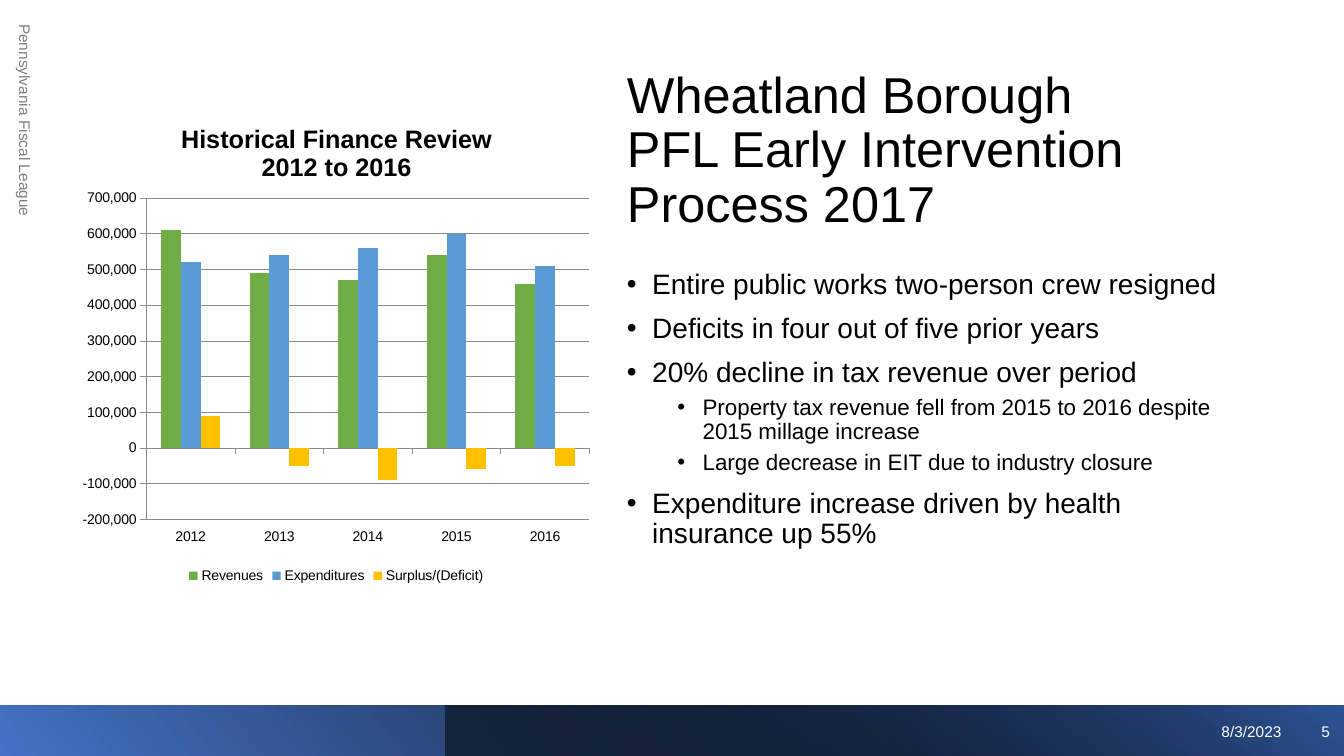
from lxml import etree
from pptx import Presentation
from pptx.chart.data import CategoryChartData
from pptx.dml.color import RGBColor
from pptx.enum.chart import XL_CHART_TYPE, XL_LEGEND_POSITION, XL_TICK_LABEL_POSITION, XL_TICK_MARK
from pptx.enum.shapes import MSO_SHAPE
from pptx.enum.text import MSO_ANCHOR, PP_ALIGN
from pptx.oxml import parse_xml
from pptx.oxml.ns import nsdecls, qn
from pptx.util import Inches, Pt

COLUMNS = XL_CHART_TYPE.COLUMN_CLUSTERED
LEGEND_BOTTOM = XL_LEGEND_POSITION.BOTTOM
LABELS_LOW = XL_TICK_LABEL_POSITION.LOW
TICK_OUT, TICK_NONE = XL_TICK_MARK.OUTSIDE, XL_TICK_MARK.NONE
RECTANGLE = MSO_SHAPE.RECTANGLE
TOP, MIDDLE, BOTTOM = MSO_ANCHOR.TOP, MSO_ANCHOR.MIDDLE, MSO_ANCHOR.BOTTOM
LEFT, RIGHT = PP_ALIGN.LEFT, PP_ALIGN.RIGHT

FONT = "Arial"
COLORS = {
    "text": "000000", "muted": "808080", "white": "FFFFFF", "grid": "8C8C8C",
    "band": "4472C4", "band_end": "2F5597",
    "revenues": "70AD47", "expenditures": "5B9BD5", "surplus": "FFC000",
}
YEARS = ["2012", "2013", "2014", "2015", "2016"]
SERIES = [
    ("Revenues", "revenues", [610000, 490000, 470000, 540000, 460000]),
    ("Expenditures", "expenditures", [520000, 540000, 560000, 600000, 510000]),
    ("Surplus/(Deficit)", "surplus", [90000, -50000, -90000, -60000, -50000]),
]
FINDINGS = [
    (0, "Entire public works two-person crew resigned"),
    (0, "Deficits in four out of five prior years"),
    (0, "20% decline in tax revenue over period"),
    (1, "Property tax revenue fell from 2015 to 2016 despite 2015 millage increase"),
    (1, "Large decrease in EIT due to industry closure"),
    (0, "Expenditure increase driven by health insurance up 55%"),
]
LEVELS = [(20, 10, 0.25), (16, 5, 0.75)]


def style_font(font, size, color="text", bold=False):
    """Set the typeface, size, colour and weight of a font."""
    font.name, font.size, font.bold = FONT, Pt(size), bold
    font.color.rgb = RGBColor.from_string(COLORS[color])


def add_span(para, text, size, color="text", bold=False):
    """Append one styled run to a paragraph."""
    span = para.add_run()
    span.text = text
    style_font(span.font, size, color, bold)


def add_box(page, left, top, width, height, anchor):
    """Add an empty wrapping text box."""
    box = page.shapes.add_textbox(Inches(left), Inches(top), Inches(width), Inches(height))
    box.text_frame.word_wrap = True
    box.text_frame.vertical_anchor = anchor
    return box


def add_label(page, place, text, color, align=LEFT, rotation=0):
    """Add a small one-line label."""
    box = add_box(page, *place, MIDDLE)
    box.rotation = rotation
    para = box.text_frame.paragraphs[0]
    para.alignment, para.space_after = align, Pt(6)
    add_span(para, text, 11, color)


def add_title(page, lines):
    """Add the slide heading with a break between its lines."""
    para = add_box(page, 6.12, 0.54, 6.29, 1.82, BOTTOM).text_frame.paragraphs[0]
    para.line_spacing = 0.9
    for index, line in enumerate(lines):
        if index:
            para.add_line_break()
        add_span(para, line, 36)


def add_findings(page):
    """Add the two-level bullet list."""
    frame = add_box(page, 6.12, 2.63, 6.29, 3.5, TOP).text_frame
    for index, (level, text) in enumerate(FINDINGS):
        size, before, indent = LEVELS[level]
        para = frame.add_paragraph() if index else frame.paragraphs[0]
        para.level, para.line_spacing, para.space_before = level, 0.9, Pt(before)
        add_span(para, text, size)
        properties = para._p.get_or_add_pPr()
        properties.set("marL", str(Inches(indent)))
        properties.set("indent", str(Inches(-0.25)))
        etree.SubElement(properties, qn("a:buFont")).set("typeface", FONT)
        etree.SubElement(properties, qn("a:buChar")).set("char", "•")


def add_band(page, left, width, stops, angle):
    """Add a footer band with a linear gradient of (position, colour, opacity) stops."""
    band = page.shapes.add_shape(RECTANGLE, Inches(left), Inches(7), Inches(width), Inches(0.5))
    band.shadow.inherit = False
    band.line.fill.background()
    stop_xml = "".join(
        f'<a:gs pos="{position * 1000}"><a:srgbClr val="{COLORS[color]}">'
        f'<a:alpha val="{opacity * 1000}"/></a:srgbClr></a:gs>'
        for position, color, opacity in stops
    )
    gradient = parse_xml(
        f'<a:gradFill {nsdecls("a")} rotWithShape="1"><a:gsLst>{stop_xml}</a:gsLst>'
        f'<a:lin ang="{angle * 60000}" scaled="0"/></a:gradFill>'
    )
    band._element.spPr.find(qn("a:prstGeom")).addnext(gradient)


def set_layout(parent, **edges):
    """Give a chart part a manual layout in fractions of the chart."""
    for old in parent.findall(qn("c:layout")):
        parent.remove(old)
    target = '<c:layoutTarget val="inner"/>' if "w" in edges else ""
    modes = "".join(f'<c:{edge}Mode val="edge"/>' for edge in "xy")
    values = "".join(f'<c:{edge} val="{value}"/>' for edge, value in edges.items())
    layout = parse_xml(
        f'<c:layout {nsdecls("c")}><c:manualLayout>{target}{modes}{values}'
        "</c:manualLayout></c:layout>"
    )
    text = parent.find(qn("c:tx"))
    if text is None:
        parent.insert(0, layout)
    else:
        text.addnext(layout)


def style_line(line):
    """Make a thin grey chart line."""
    line.width = Pt(0.5)
    line.color.rgb = RGBColor.from_string(COLORS["grid"])


def add_finance_chart(page):
    """Add the clustered columns of revenues, expenditures and balance."""
    data = CategoryChartData(number_format="#,##0")
    data.categories = YEARS
    for name, _, values in SERIES:
        data.add_series(name, values)
    chart = page.shapes.add_chart(
        COLUMNS, Inches(0.72), Inches(1), Inches(5.23), Inches(4.83), data
    ).chart
    style_font(chart.font, 10)
    frame = chart.chart_title.text_frame
    add_span(frame.paragraphs[0], "Historical Finance Review", 18, bold=True)
    add_span(frame.add_paragraph(), "2012 to 2016", 18, bold=True)
    chart.chart_title.include_in_layout = False
    set_layout(chart.chart_title._element, x=0.2, y=0.04)
    set_layout(chart._chartSpace.chart.plotArea, x=0.14, y=0.2, w=0.84, h=0.66)
    chart.has_legend = True
    chart.legend.position = LEGEND_BOTTOM
    chart.legend.include_in_layout = False
    style_font(chart.legend.font, 10)
    plot = chart.plots[0]
    plot.gap_width, plot.overlap, plot.vary_by_categories = 150, 0, False
    for series, (_, color, _) in zip(plot.series, SERIES):
        series.invert_if_negative = False
        series.format.fill.solid()
        series.format.fill.fore_color.rgb = RGBColor.from_string(COLORS[color])
    for axis in (chart.category_axis, chart.value_axis):
        axis.major_tick_mark, axis.minor_tick_mark = TICK_OUT, TICK_NONE
        style_font(axis.tick_labels.font, 10)
        style_line(axis.format.line)
    chart.category_axis.tick_label_position = LABELS_LOW
    values = chart.value_axis
    values.minimum_scale, values.maximum_scale, values.major_unit = -200000, 700000, 100000
    values.tick_labels.number_format = "#,##0"
    values.tick_labels.number_format_is_linked = False
    values.has_major_gridlines = True
    style_line(values.major_gridlines.format.line)


def main():
    """Build and save the slide."""
    deck = Presentation()
    deck.slide_width, deck.slide_height = Inches(13.33), Inches(7.5)
    page = deck.slides.add_slide(deck.slide_layouts[6])
    add_title(page, ["Wheatland Borough", "PFL Early Intervention Process 2017"])
    add_label(page, (-2, 2.19, 4.5, 0.4), "Pennsylvania Fiscal League", "muted", rotation=90)
    add_findings(page)
    add_band(page, 0, 13.33, [(0, "band", 100), (90, "text", 100)], 320)
    add_band(page, 4.42, 8.91, [(0, "text", 50), (100, "band_end", 100)], 310)
    add_label(page, (9.81, 7.06, 3, 0.4), "8/3/2023", "white", RIGHT)
    add_label(page, (12.8, 7.06, 0.49, 0.4), "5", "white", RIGHT)
    add_finance_chart(page)
    deck.save("out.pptx")


if __name__ == "__main__":
    main()
